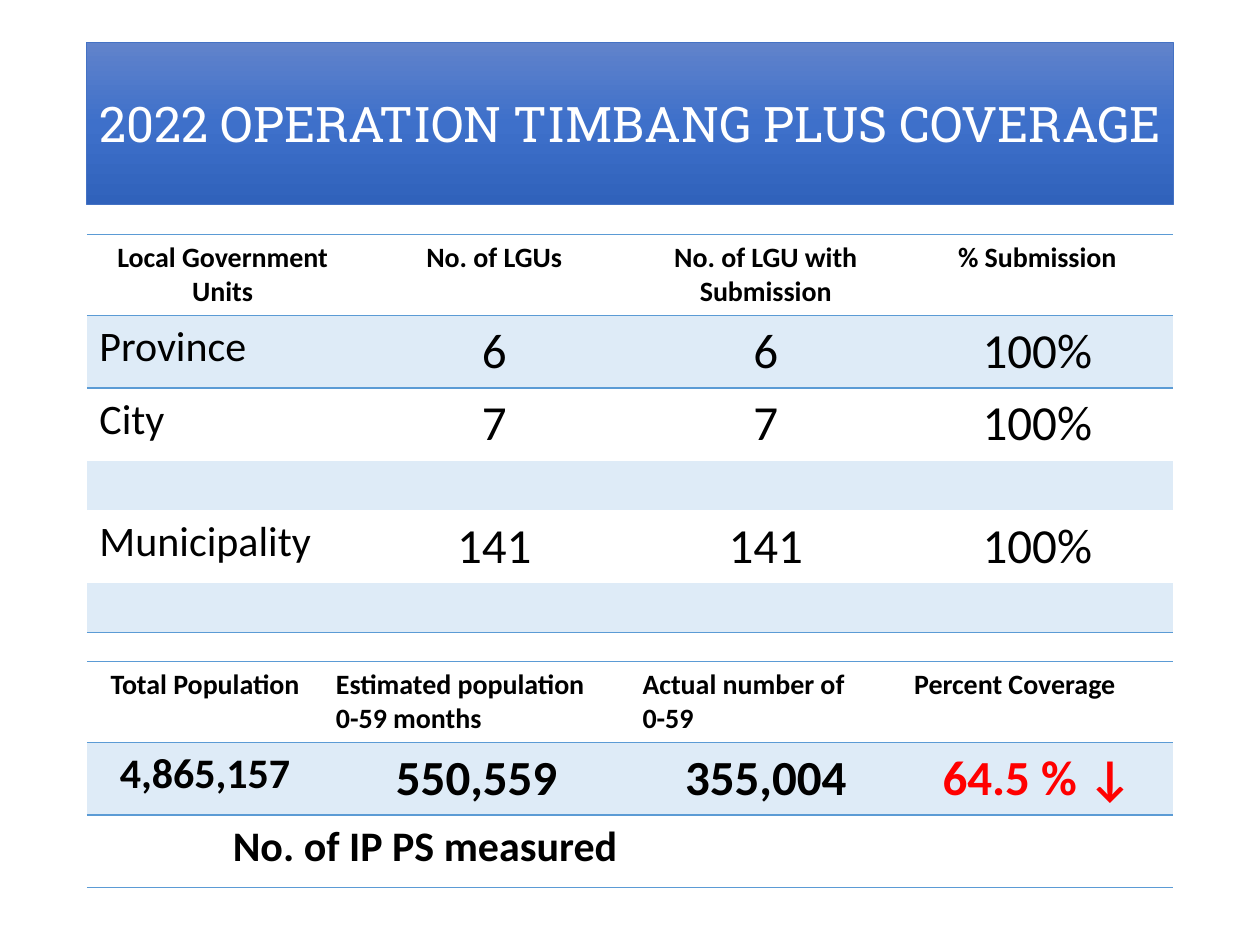
from copy import deepcopy
from pptx import Presentation
from pptx.dml.color import RGBColor
from pptx.enum.text import MSO_ANCHOR, MSO_AUTO_SIZE, PP_ALIGN
from pptx.oxml import parse_xml
from pptx.oxml.ns import nsdecls, qn
from pptx.util import Pt

BLUE, BAND, BLACK, RED = "5B9BD5", "DEEBF7", "000000", "FF0000"
NO_STYLE = "{2D5ABB26-0587-4C30-8999-92F81FD0307C}"
L, C, R = PP_ALIGN.LEFT, PP_ALIGN.CENTER, PP_ALIGN.RIGHT
LEFT, WIDTH = 49.6, 620.8


def rgb(color):
    return RGBColor.from_string(color)


def border(cell, side):
    tag = "ln" + side
    cell._tc.get_or_add_tcPr().insert(0, parse_xml(
        f'<a:{tag} {nsdecls("a")} w="12700"><a:solidFill><a:srgbClr val="{BLUE}"/>'
        f'</a:solidFill></a:{tag}>'))


prs = Presentation()
prs.slide_width, prs.slide_height = Pt(720), Pt(540)
s = prs.slides.add_slide(prs.slide_layouts[5])

# Title banner
sp = s.shapes.title
sp.left, sp.top, sp.width, sp.height = Pt(LEFT), Pt(24), Pt(WIDTH), Pt(93)
sp.line.color.rgb = rgb("4472C4")
sp.line.width = Pt(0.5)
sp.fill.gradient()
sp.fill.gradient_angle = 270
gs_list = sp._element.spPr.find(qn("a:gradFill")).find(qn("a:gsLst"))
gs_list.insert(1, deepcopy(gs_list[0]))
for stop, pos, color in zip(sp.fill.gradient_stops, (0, 0.5, 1),
                            ("6183CB", "3E70CA", "3062BB")):
    stop.position = pos
    stop.color.rgb = rgb(color)
tf = sp.text_frame
tf.text = "2022 OPERATION TIMBANG PLUS COVERAGE"
tf.auto_size = MSO_AUTO_SIZE.NONE
tf.vertical_anchor = MSO_ANCHOR.MIDDLE
p = tf.paragraphs[0]
p.alignment = C
font = p.runs[0].font
font.name, font.size, font.color.rgb = "Roboto Slab", Pt(28), rgb("FFFFFF")

# Each row: height, banded, cells (text, size, bold, alignment, colour)
lgu_rows = [(46.4, False, [(t, 16, True, C, BLACK) for t in (
    "Local Government Units", "No. of LGUs", "No. of LGU with Submission", "% Submission")])]
for name, count, banded in (("Province", "6", True), ("City", "7", False), ("", "", True),
                            ("Municipality", "141", False), ("", "", True)):
    if name:
        cells = [(name, 24, False, L, BLACK)]
        cells += [(t, 28, False, C, BLACK) for t in (count, count, "100%")]
        lgu_rows.append((41.4, banded, cells))
    else:
        lgu_rows.append((28.4, banded, []))

population_rows = [
    (46.4, False, [("Total Population", 16, True, C, BLACK),
                   ("Estimated population\n0-59 months", 16, True, L, BLACK),
                   ("Actual number of\n0-59", 16, True, L, BLACK),
                   ("Percent Coverage", 16, True, L, BLACK)]),
    (41.4, True, [("4,865,157", 24, True, C, BLACK), ("550,559", 28, True, C, BLACK),
                  ("355,004", 28, True, C, BLACK), ("64.5 % ↓", 28, True, C, RED)]),
    (41.4, False, [("No. of IP PS measured", 24, True, R, BLACK)]),
]

# Tables: top, column widths, rows, merged column ranges by row
tables = [
    (133.9, [155.2] * 4, lgu_rows, {3: [(0, 3)], 5: [(0, 3)]}),
    (378, [135.2, 175.2, 155.2, 155.2], population_rows, {2: [(0, 1), (2, 3)]}),
]
for top, widths, rows, merges in tables:
    height = sum(row[0] for row in rows)
    frame = s.shapes.add_table(len(rows), 4, Pt(LEFT), Pt(top), Pt(WIDTH), Pt(height))
    tbl = frame.table
    tbl.first_row = tbl.horz_banding = False
    tbl._tbl.tblPr.find(qn("a:tableStyleId")).text = NO_STYLE
    for col, width in zip(tbl.columns, widths):
        col.width = Pt(width)
    for i, (row_height, banded, cells) in enumerate(rows):
        tbl.rows[i].height = Pt(row_height)
        for first, last in merges.get(i, []):
            tbl.cell(i, first).merge(tbl.cell(i, last))
        for j in range(4):
            cell = tbl.cell(i, j)
            if banded:
                cell.fill.solid()
                cell.fill.fore_color.rgb = rgb(BAND)
            else:
                cell.fill.background()
            # Rules above and below the header and under the last row
            if i in (0, len(rows) - 1):
                border(cell, "B")
            if i in (0, 1):
                border(cell, "T")
            if j >= len(cells):
                cell.margin_top = cell.margin_bottom = Pt(0)
                continue
            text, size, bold, align, color = cells[j]
            cell.text_frame.text = text
            for p in cell.text_frame.paragraphs:
                p.alignment = align
                font = p.runs[0].font
                font.name, font.size, font.bold = "Calibri", Pt(size), bold
                font.color.rgb = rgb(color)

prs.save("out.pptx")
